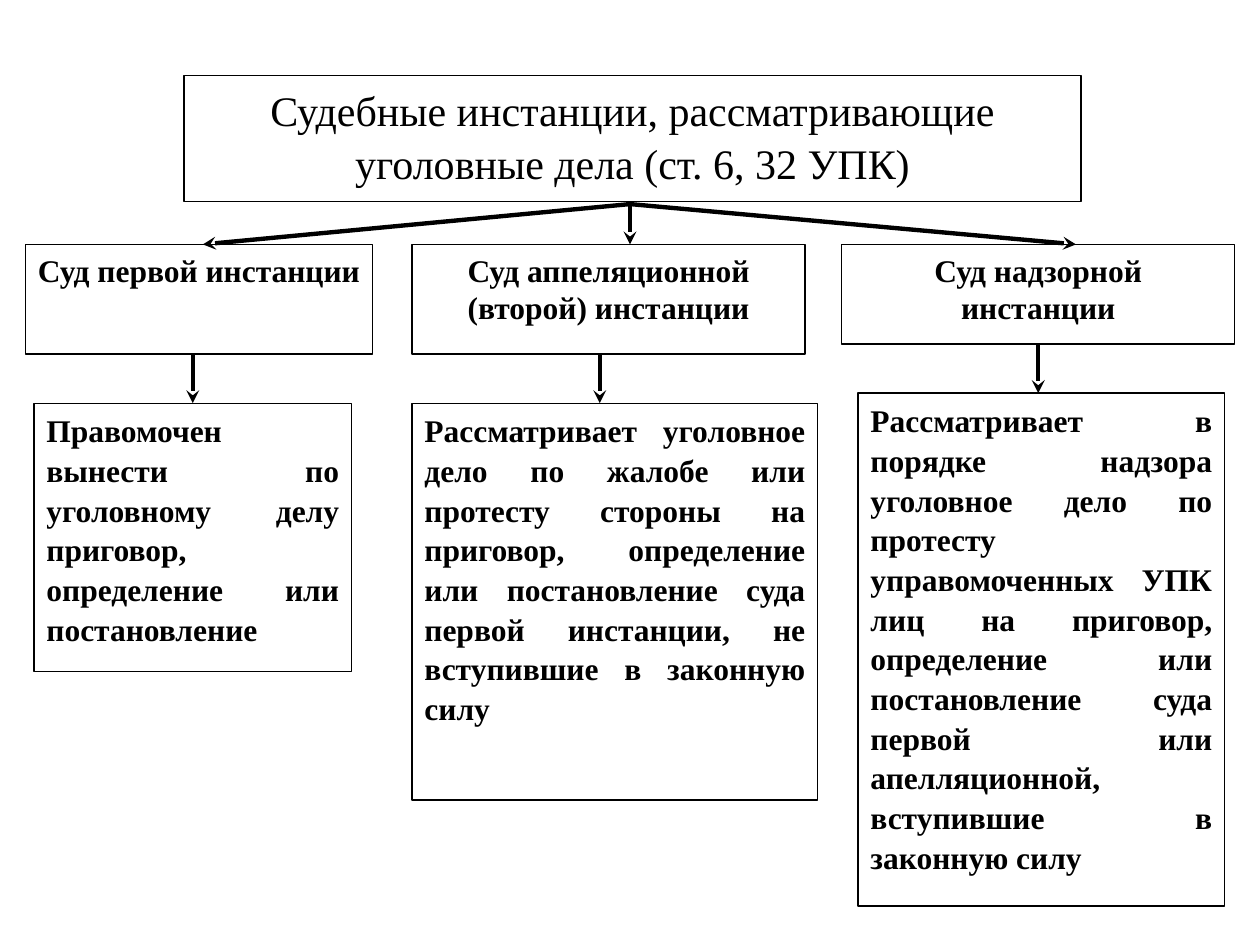
from pptx import Presentation
from pptx.dml.color import RGBColor
from pptx.enum.shapes import MSO_CONNECTOR, MSO_SHAPE
from pptx.enum.text import MSO_ANCHOR, PP_ALIGN
from pptx.oxml.ns import qn
from pptx.util import Inches, Pt
from lxml import etree

BLACK = RGBColor(0, 0, 0)
WHITE = RGBColor(255, 255, 255)
TOP, BOTTOM = 0, 2

TITLE = "Судебные инстанции, рассматривающие уголовные дела (ст. 6, 32 УПК)"
TITLE_BOX = (1.46, 0.6, 7.12, 1)
FORK = (5, 1.62)

# Each court: name, name box, powers, powers box, x of the arrow in, x of the arrow out
COURTS = [
    ("Суд первой инстанции", (0.2, 1.94, 2.76, 0.87),
     "Правомочен вынести по уголовному делу приговор, определение или постановление",
     (0.27, 3.2, 2.52, 2.13), 1.61, 1.53),
    ("Суд аппеляционной (второй) инстанции", (3.27, 1.94, 3.12, 0.87),
     "Рассматривает уголовное дело по жалобе или протесту стороны на приговор, "
     "определение или постановление суда первой инстанции, не вступившие в законную силу",
     (3.27, 3.2, 3.22, 3.15), 5, 4.76),
    ("Суд надзорной инстанции", (6.68, 1.94, 3.12, 0.79),
     "Рассматривает в порядке надзора уголовное дело по протесту управомоченных УПК лиц "
     "на приговор, определение или постановление суда первой или апелляционной, "
     "вступившие в законную силу",
     (6.81, 3.12, 2.91, 4.07), 8.54, 8.24),
]


def add_text_box(page, box, text, size=18, bold=True, align=PP_ALIGN.CENTER, spacing=1.0):
    shape = page.shapes.add_shape(MSO_SHAPE.RECTANGLE, *map(Inches, box))
    shape.shadow.inherit = False
    shape.fill.solid()
    shape.fill.fore_color.rgb = WHITE
    shape.line.color.rgb = BLACK
    shape.line.width = Pt(0.75)
    frame = shape.text_frame
    frame.word_wrap = True
    frame.vertical_anchor = MSO_ANCHOR.TOP
    para = frame.paragraphs[0]
    para.alignment = align
    para.line_spacing = spacing
    span = para.add_run()
    span.text = text
    font_format = {"name": "Times New Roman", "size": Pt(size), "bold": bold}
    for name, value in font_format.items():
        setattr(span.font, name, value)
    span.font.color.rgb = BLACK
    return shape


def add_arrow(page, start, end):
    arrow = page.shapes.add_connector(MSO_CONNECTOR.STRAIGHT, *map(Inches, start + end))
    arrow.line.color.rgb = BLACK
    arrow.line.width = Pt(2.5)
    etree.SubElement(arrow.line._get_or_add_ln(), qn("a:tailEnd"), type="stealth")
    etree.SubElement(arrow._element.spPr, qn("a:effectLst"))
    return arrow


def join_at_middle(arrow, x, upper, upper_box, lower, lower_box):
    """Glue the ends of a vertical arrow that meet the middle of a box side."""
    def is_middle(box):
        return abs(box[0] + box[2] / 2 - x) < 0.006

    if is_middle(upper_box):
        arrow.begin_connect(upper, BOTTOM)
    if is_middle(lower_box):
        arrow.end_connect(lower, TOP)


def add_court(page, name, name_box, powers, powers_box, x_in, x_out):
    name_shape = add_text_box(page, name_box, name)
    powers_shape = add_text_box(page, powers_box, powers,
                                align=PP_ALIGN.JUSTIFY, spacing=1.05)
    add_arrow(page, FORK, (x_in, name_box[1]))
    arrow = add_arrow(page, (x_out, name_box[1] + name_box[3]), (x_out, powers_box[1]))
    join_at_middle(arrow, x_out, name_shape, name_box, powers_shape, powers_box)


def main():
    deck = Presentation()
    deck.slide_width, deck.slide_height = Inches(10), Inches(7.5)
    page = deck.slides.add_slide(deck.slide_layouts[6])
    add_text_box(page, TITLE_BOX, TITLE, size=24, bold=False, spacing=1.05)
    for court in COURTS:
        add_court(page, *court)
    deck.save("out.pptx")


if __name__ == "__main__":
    main()
